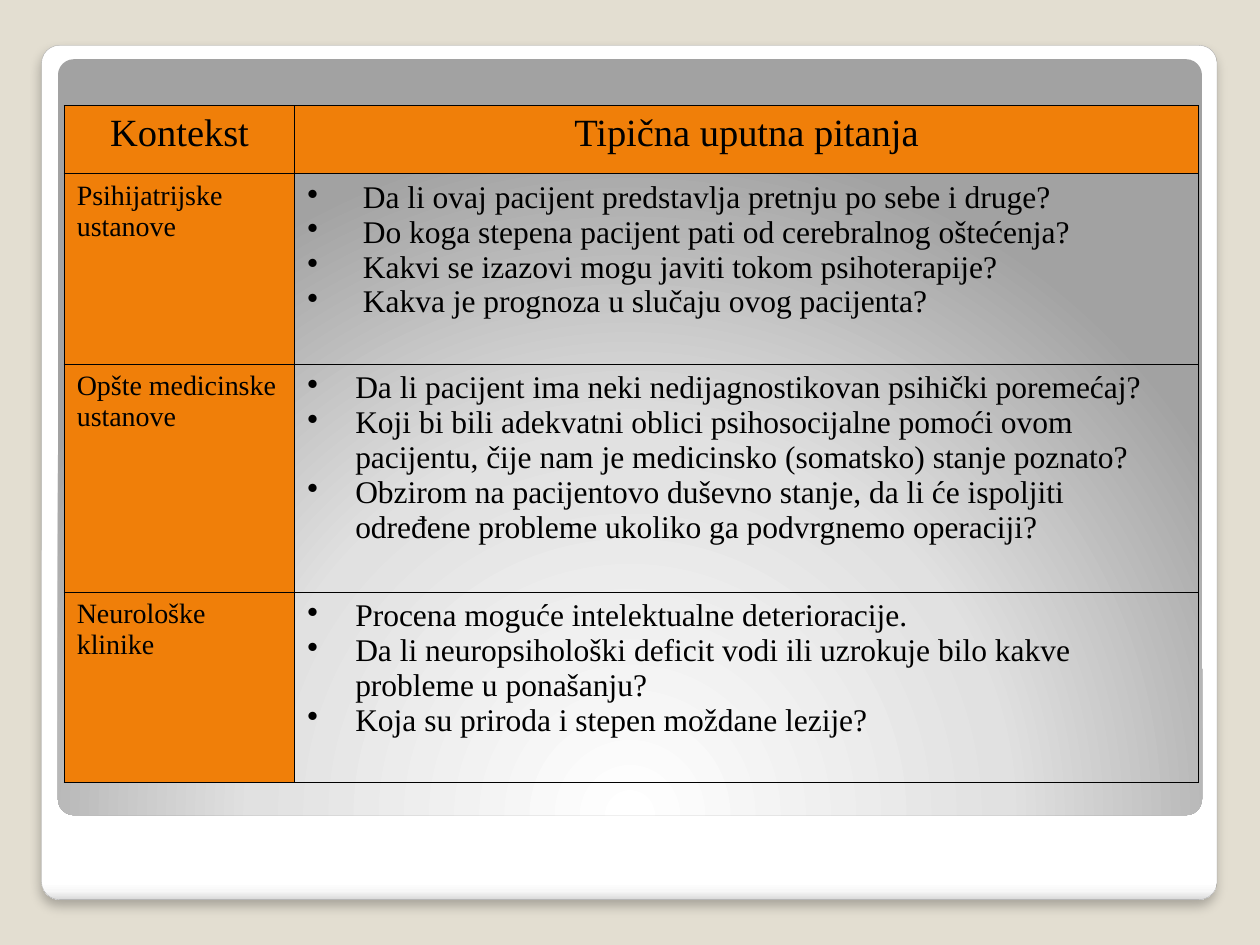
"""Build a slide with a table of typical referral questions by clinical context."""
from lxml import etree
from pptx import Presentation
from pptx.dml.color import RGBColor
from pptx.enum.shapes import MSO_SHAPE
from pptx.enum.text import PP_ALIGN
from pptx.oxml import parse_xml
from pptx.oxml.ns import qn
from pptx.util import Inches, Pt

ROUNDED = MSO_SHAPE.ROUNDED_RECTANGLE
CENTER, LEFT = PP_ALIGN.CENTER, PP_ALIGN.LEFT
NAMESPACE = 'xmlns:a="http://schemas.openxmlformats.org/drawingml/2006/main"'
BEIGE = RGBColor(0xE3, 0xDE, 0xD1)
ORANGE = RGBColor(0xF0, 0x7F, 0x09)
GRAY = RGBColor(0xA4, 0xA4, 0xA4)
BLACK = RGBColor(0, 0, 0)
FONT = "Times New Roman"

HEADINGS = ["Kontekst", "Tipična uputna pitanja"]
CONTEXTS = [
    ("Psihijatrijske ustanove", 0.44, [
        "Da li ovaj pacijent predstavlja pretnju po sebe i druge?",
        "Do koga stepena pacijent pati od cerebralnog oštećenja?",
        "Kakvi se izazovi mogu javiti tokom psihoterapije?",
        "Kakva je prognoza u slučaju ovog pacijenta?",
    ]),
    ("Opšte medicinske ustanove", 0.38, [
        "Da li pacijent ima neki nedijagnostikovan psihički poremećaj?",
        "Koji bi bili adekvatni oblici psihosocijalne pomoći ovom pacijentu, "
        "čije nam je medicinsko (somatsko) stanje poznato?",
        "Obzirom na pacijentovo duševno stanje, da li će ispoljiti "
        "određene probleme ukoliko ga podvrgnemo operaciji?",
    ]),
    ("Neurološke klinike", 0.38, [
        "Procena moguće intelektualne deterioracije.",
        "Da li neuropsihološki deficit vodi ili uzrokuje bilo kakve "
        "probleme u ponašanju?",
        "Koja su priroda i stepen moždane lezije?",
    ]),
]
COLUMN_WIDTHS = [1.83, 7.17]
ROW_HEIGHTS = [0.54, 1.51, 1.81, 1.51]


def add_panel(slide, box, stops, direction):
    panel = slide.shapes.add_shape(ROUNDED, *[Inches(side) for side in box])
    panel.adjustments[0] = 0.021
    panel.shadow.inherit = False
    panel.line.fill.background()
    panel.fill.background()
    stop_list = "".join(
        f'<a:gs pos="{share * 1000}"><a:srgbClr val="{color}"/></a:gs>'
        for share, color in stops)
    properties = panel.fill._xPr
    properties.replace(properties.find(qn("a:noFill")), parse_xml(
        f'<a:gradFill {NAMESPACE} rotWithShape="1"><a:gsLst>{stop_list}</a:gsLst>'
        f'{direction}</a:gradFill>'))
    return panel


def fill_cell(cell, lines, size, align=LEFT, indent=0, color=None):
    cell.text = "\n".join(lines)
    if color is None:
        cell.fill.background()
    else:
        cell.fill.solid()
        cell.fill.fore_color.rgb = color
    for paragraph in cell.text_frame.paragraphs:
        paragraph.alignment = align
        paragraph.font.name = FONT
        paragraph.font.size = Pt(size)
        paragraph.font.color.rgb = BLACK
        if indent:
            settings = paragraph._p.get_or_add_pPr()
            settings.set("marL", str(Inches(indent)))
            settings.set("indent", str(-Inches(indent)))
            bullet = parse_xml(f'<a:buChar {NAMESPACE} char="•"/>')
            settings.find(qn("a:defRPr")).addprevious(bullet)
    for position, side in enumerate(["lnL", "lnR", "lnT", "lnB"]):
        cell._tc.get_or_add_tcPr().insert(position, parse_xml(
            f'<a:{side} {NAMESPACE} w="{Pt(0.75)}"><a:solidFill>'
            f'<a:srgbClr val="{BLACK}"/></a:solidFill></a:{side}>'))


deck = Presentation()
deck.slide_width, deck.slide_height = Inches(10), Inches(7.5)
slide = deck.slides.add_slide(deck.slide_layouts[6])
slide.background.fill.solid()
slide.background.fill.fore_color.rgb = BEIGE

card = add_panel(
    slide, [0.33, 0.36, 9.33, 6.78],
    [(0, "FFFFFF"), (98, "FFFFFF"), (99, "F7F7F7"), (100, "DADADA")],
    '<a:lin ang="5400000" scaled="0"/>')
card.line.color.rgb = GRAY
card.line.width = Pt(0.16)
effects = card.fill._xPr.find(qn("a:effectLst"))
shadow = etree.SubElement(effects, qn("a:outerShdw"), blurRad=str(Pt(6)),
                          dist=str(Pt(4)), dir="5400000", rotWithShape="0")
shadow_color = etree.SubElement(shadow, qn("a:srgbClr"), val=str(BLACK))
etree.SubElement(shadow_color, qn("a:alpha"), val="25000")

add_panel(
    slide, [0.46, 0.47, 9.08, 6],
    [(0, "FFFFFF"), (55, "E1E1E1"), (100, "A2A2A2")],
    '<a:path path="circle">'
    '<a:fillToRect l="50000" t="175000" r="50000" b="-75000"/></a:path>')

questions_table = slide.shapes.add_table(
    len(ROW_HEIGHTS), len(COLUMN_WIDTHS), Inches(0.51), Inches(0.84),
    Inches(sum(COLUMN_WIDTHS)), Inches(sum(ROW_HEIGHTS))).table
questions_table.first_row = False
questions_table.horz_banding = False
for column, width in zip(questions_table.columns, COLUMN_WIDTHS):
    column.width = Inches(width)
for row, height in zip(questions_table.rows, ROW_HEIGHTS):
    row.height = Inches(height)

for index, heading in enumerate(HEADINGS):
    fill_cell(questions_table.cell(0, index), [heading], 22, CENTER, color=ORANGE)
for index, (context, indent, questions) in enumerate(CONTEXTS, start=1):
    fill_cell(questions_table.cell(index, 0), [context], 16, color=ORANGE)
    fill_cell(questions_table.cell(index, 1), questions, 18, indent=indent)

deck.save("out.pptx")
